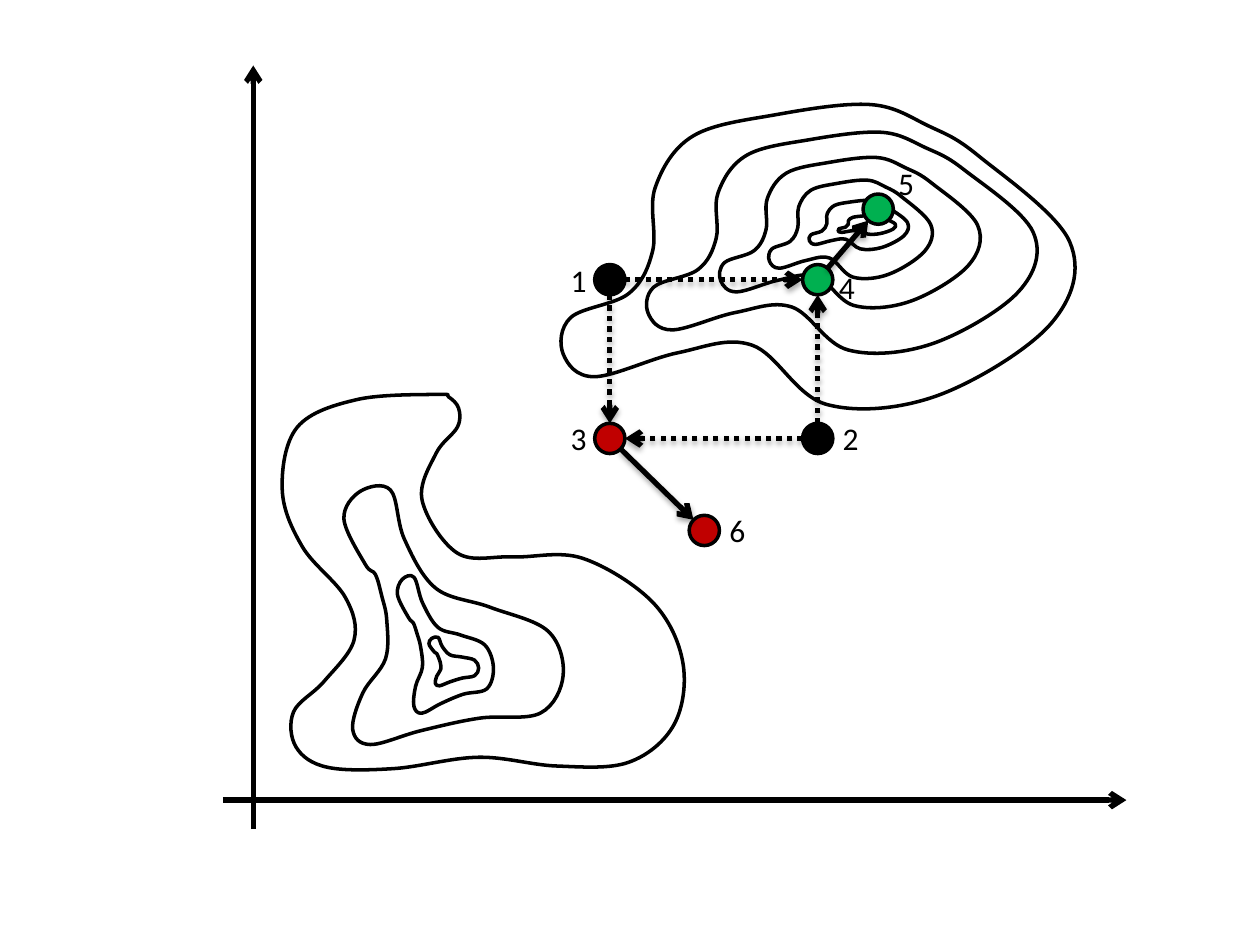
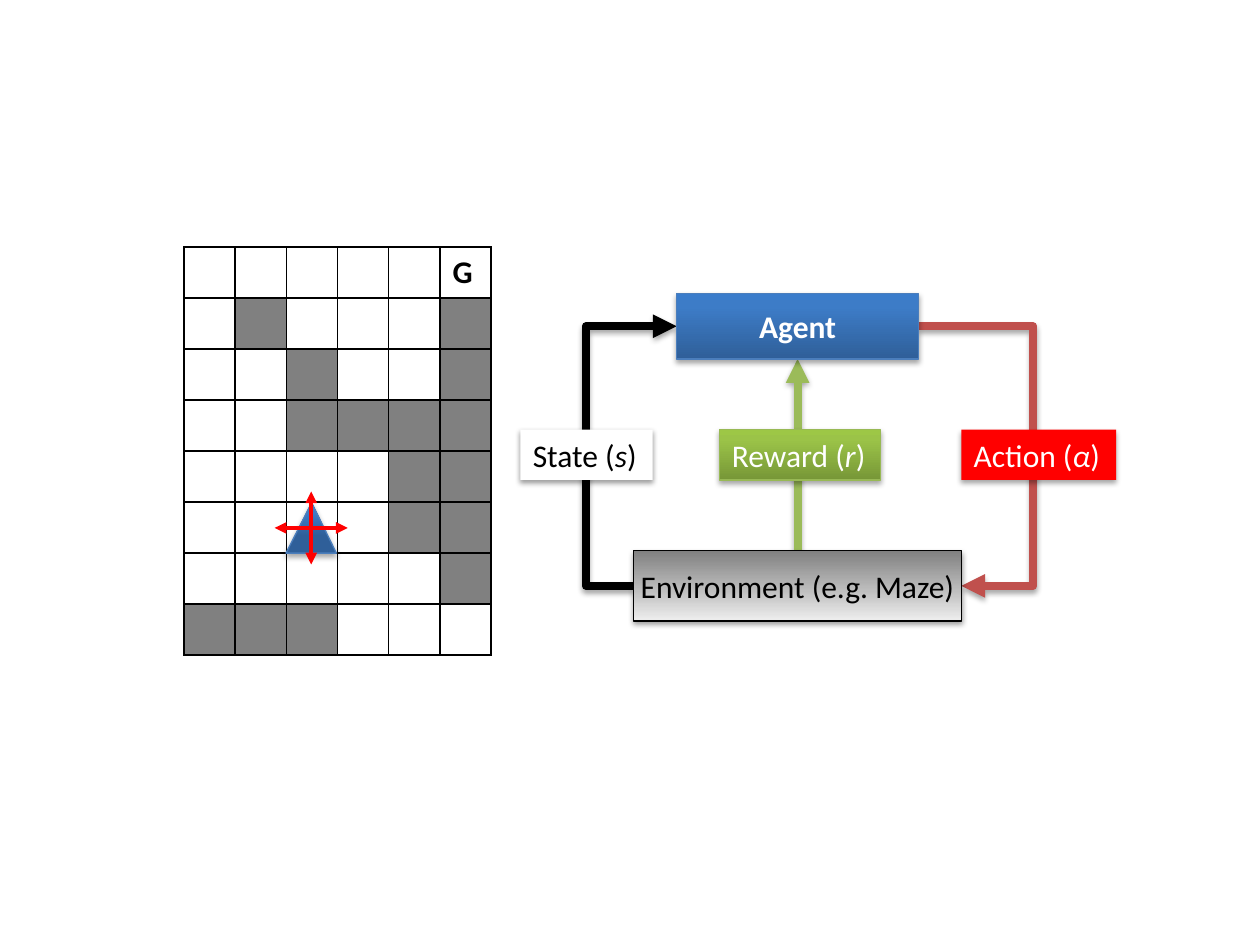
from dataclasses import dataclass
from math import hypot

from lxml import etree
from pptx import Presentation
from pptx.dml.color import RGBColor
from pptx.enum.dml import MSO_LINE
from pptx.enum.shapes import MSO_CONNECTOR, MSO_SHAPE
from pptx.enum.text import MSO_ANCHOR, MSO_AUTO_SIZE, PP_ALIGN
from pptx.oxml.ns import qn
from pptx.util import Inches, Pt

# The slide is a grid of 1000 columns by 750 rows; every length is in grid units
COLUMNS, ROWS = 1000, 750
UNIT = Inches(10) // COLUMNS

BLACK = RGBColor(0x00, 0x00, 0x00)
WHITE = RGBColor(0xFF, 0xFF, 0xFF)
GREY = RGBColor(0x80, 0x80, 0x80)
PALE_GREY = RGBColor(0xEE, 0xEE, 0xEE)
RED = RGBColor(0xFF, 0x00, 0x00)
DARK_RED = RGBColor(0xC0, 0x00, 0x00)
BRICK = RGBColor(0xC0, 0x50, 0x4D)
GREEN = RGBColor(0x00, 0xB0, 0x50)
OLIVE = RGBColor(0x9B, 0xBB, 0x59)
OLIVE_EDGE = RGBColor(0x98, 0xB9, 0x55)
BLUE_EDGE = RGBColor(0x4B, 0x7E, 0xBC)
BLUES = [RGBColor(0x2F, 0x5F, 0x99), RGBColor(0x3D, 0x7C, 0xC7), RGBColor(0x3A, 0x7C, 0xCB)]
OLIVES = [RGBColor(0x77, 0x97, 0x37), RGBColor(0x9B, 0xC3, 0x48), RGBColor(0x9D, 0xC7, 0x46)]

STRAIGHT, ELBOW = MSO_CONNECTOR.STRAIGHT, MSO_CONNECTOR.ELBOW
ELLIPSE, RECTANGLE, TRIANGLE = MSO_SHAPE.OVAL, MSO_SHAPE.RECTANGLE, MSO_SHAPE.ISOSCELES_TRIANGLE
DOTTED = MSO_LINE.ROUND_DOT
MIDDLE, TOP = MSO_ANCHOR.MIDDLE, MSO_ANCHOR.TOP
CENTER, LEFT = PP_ALIGN.CENTER, PP_ALIGN.LEFT
GROW, FIXED = MSO_AUTO_SIZE.SHAPE_TO_FIT_TEXT, MSO_AUTO_SIZE.NONE

TEXT_FORMAT = {"name": "Calibri", "size": Pt(18)}
CENTRED = {"align": CENTER, "vertical_anchor": MIDDLE, "auto_size": FIXED}
# Shadow opacity in percent and distance in EMU
NO_SHADOW, STRONG, SOFT = (0, 0), (35, 23000), (38, 20000)


@dataclass
class Box:
    left: float
    top: float
    width: float
    height: float

    def at(self, across, down):
        """Point at these shares of the width and height."""
        return self.left + across * self.width, self.top + down * self.height

    def emu(self):
        return grid(self.left, self.top, self.width, self.height)


@dataclass
class Landform:
    """Closed smooth outline through anchors, with the box it fills."""
    box: Box
    anchors: list


BASIN = Landform(Box(224, 313, 318, 298), [
    (348, 313), (284, 317), (236, 339), (224, 389), (240, 434), (274, 474), (281, 508),
    (257, 541), (233, 565), (235, 593), (260, 609), (313, 610), (380, 601), (442, 608),
    (499, 605), (535, 575), (542, 526), (518, 478), (462, 443), (407, 442), (363, 439),
    (335, 397), (346, 360), (363, 339), (364, 324), (356, 315)])
VALLEY = Landform(Box(273, 386, 174, 206), [
    (290, 448), (273, 412), (286, 390), (310, 389), (321, 428), (346, 467), (389, 482),
    (435, 501), (447, 536), (429, 566), (381, 570), (334, 580), (294, 591), (280, 579),
    (288, 550), (306, 523), (307, 492), (303, 473), (298, 456)])
HILL = Landform(Box(445, 83, 408, 241), [
    (777, 124), (849, 192), (834, 257), (744, 314), (656, 321), (597, 274), (538, 280),
    (472, 299), (447, 281), (453, 252), (499, 233), (518, 199), (520, 149), (550, 108),
    (616, 91), (691, 83), (737, 100)])

# Contour levels, outermost first: each refits its landform to a smaller box
INNER_TURN = 353.4
VALLEY_CORE = [Box(320, 454, 69, 110), Box(342, 504, 37, 39)]
HILL_LEVELS = [HILL.box, Box(513, 105, 310, 175), Box(571, 125, 207, 119),
               Box(610, 143, 130, 78), Box(642, 159, 79, 39), Box(665, 171, 46, 15)]

# Search points: centre, colour, corner of the number's box
RADIUS = 12
START_X, CROSS_X, HIGH_Y, LOW_Y = 484, 649, 222, 348
POINTS = {
    "1": ((START_X, HIGH_Y), BLACK, (443, 202)),
    "2": ((CROSS_X, LOW_Y), BLACK, (659, 328)),
    "3": ((START_X, LOW_Y), DARK_RED, (443, 328)),
    "4": ((CROSS_X, HIGH_Y), GREEN, (656, 208)),
    "5": ((697, 166), GREEN, (703, 125)),
    "6": ((559, 421), DARK_RED, (569, 401)),
}
CROSSOVERS = ["13", "14", "23", "24"]
IMPROVEMENTS = ["36", "45"]

# Maze rows: # wall, . free, G goal
MAZE = [".....G", ".#...#", "..#..#", "..####", "....##", "....##", ".....#", "###..."]
MAZE_BOX = Box(146, 196, 244, 324)
WALKER_BOX = Box(227, 399, 40, 40)
WALKER_REACH = 29

# Learning loop
AGENT_BOX = Box(537, 233, 192, 52)
ENVIRONMENT_BOX = Box(503, 437, 260, 56)
STATE_LANE, ACTION_LANE = 465, 820
SIGNAL_TOP, SIGNAL_HEIGHT = 341, 40


def grid(*lengths):
    return [round(length * UNIT) for length in lengths]


def set_all(target, values):
    for name, value in values.items():
        setattr(target, name, value)


def add_xml(parent, tag, **attributes):
    return etree.SubElement(parent, qn(tag), {k: str(v) for k, v in attributes.items()})


def set_shadow(shape, opacity, distance):
    """Write the effect list; call after fill and line are set."""
    effects = add_xml(shape._element.spPr, "a:effectLst")
    if opacity:
        shadow = add_xml(effects, "a:outerShdw", blurRad=40000, dist=distance,
                         dir=5400000, rotWithShape=0)
        color = add_xml(shadow, "a:srgbClr", val=BLACK)
        add_xml(color, "a:alpha", val=opacity * 1000)


def rising(colors, first=0):
    """Gradient from bottom to top."""
    return list(zip((first, 80, 100), colors)), 270


def set_gradient(shape, stops, angle):
    shape.fill.gradient()
    gradient = shape._element.spPr.find(qn("a:gradFill"))
    stop_list = gradient.find(qn("a:gsLst"))
    del stop_list[:]
    for position, color in stops:
        add_xml(add_xml(stop_list, "a:gs", pos=position * 1000), "a:srgbClr", val=color)
    gradient.find(qn("a:lin")).set("ang", str(angle * 60000))


def paint(shape, fill, edge=None, width=0.75, shadow=NO_SHADOW):
    """Fill is a colour, or a pair of gradient stops and angle."""
    if isinstance(fill, RGBColor):
        shape.fill.solid()
        shape.fill.fore_color.rgb = fill
    else:
        set_gradient(shape, *fill)
    if edge is None:
        shape.line.fill.background()
    else:
        shape.line.color.rgb = edge
        shape.line.width = Pt(width)
    set_shadow(shape, *shadow)


def draw_shape(slide, kind, box, fill, **look):
    shape = slide.shapes.add_shape(kind, *box.emu())
    paint(shape, fill, **look)
    return shape


def add_run(paragraph, text, color, **style):
    run = paragraph.add_run()
    run.text = text
    set_all(run.font, {**TEXT_FORMAT, **style})
    run.font.color.rgb = color


def write(frame, text, color, symbol=None, bold=False, align=LEFT, **frame_format):
    """A symbol follows the text in italics, in brackets."""
    set_all(frame, {"word_wrap": False, "vertical_anchor": TOP, "auto_size": GROW, **frame_format})
    paragraph = frame.paragraphs[0]
    paragraph.alignment = align
    parts = [(f"{text} (", False), (symbol, True), (")", False)] if symbol else [(text, False)]
    for part, italic in parts:
        add_run(paragraph, part, color, bold=bold, italic=italic)


def draw_line(slide, start, end, color, width, head=None, tail=None,
              dash=None, shadow=NO_SHADOW, lane=None):
    """A lane is the x of the upright part of an elbow line."""
    kind = STRAIGHT if lane is None else ELBOW
    connector = slide.shapes.add_connector(kind, *grid(*start, *end))
    connector.line.color.rgb = color
    set_all(connector.line, {"width": Pt(width), "dash_style": dash})
    outline = connector._element.spPr.find(qn("a:ln"))
    for tag, arrow in (("a:headEnd", head), ("a:tailEnd", tail)):
        if arrow:
            add_xml(outline, tag, type=arrow)
    if lane is not None:
        share = (lane - start[0]) / (end[0] - start[0])
        guides = connector._element.spPr.find(qn("a:prstGeom")).get_or_add_avLst()
        add_xml(guides, "a:gd", name="adj1", fmla=f"val {round(share * 100000)}")
    set_shadow(connector, *shadow)


def smooth_segments(anchors):
    """Bezier triples; the tangent at an anchor follows the chord of its neighbours."""
    count = len(anchors)
    for i in range(count):
        before, start, end, after = (anchors[(i + k) % count] for k in (-1, 0, 1, 2))
        leave = [s + (e - b) / 6 for b, s, e in zip(before, start, end)]
        arrive = [e - (a - s) / 6 for s, e, a in zip(start, end, after)]
        yield leave, arrive, end


def draw_contour(slide, landform, box, turn=0):
    base = landform.box
    builder = slide.shapes.build_freeform(0, 0, scale=UNIT)
    builder.add_line_segments([(base.width, base.height)])
    contour = builder.convert_to_shape()
    fitted = dict(zip(("left", "top", "width", "height"), box.emu()))
    set_all(contour, {**fitted, "rotation": turn})
    paint(contour, WHITE, BLACK, 2)

    # Outline in tenths of a grid unit of the base box, stretched to the fitted box
    outline = contour._element.find(".//" + qn("a:path"))
    del outline[:]
    outline.set("w", str(base.width * 10))
    outline.set("h", str(base.height * 10))

    def add_step(tag, points):
        step = add_xml(outline, tag)
        for x, y in points:
            add_xml(step, "a:pt", x=round((x - base.left) * 10), y=round((y - base.top) * 10))

    add_step("a:moveTo", landform.anchors[:1])
    for segment in smooth_segments(landform.anchors):
        add_step("a:cubicBezTo", segment)
    add_xml(outline, "a:close")


def draw_move(slide, pair, dash=None):
    """Arrow between the rims of two search points."""
    (x1, y1), (x2, y2) = (POINTS[number][0] for number in pair)
    share = RADIUS / hypot(x2 - x1, y2 - y1)
    dx, dy = (x2 - x1) * share, (y2 - y1) * share
    draw_line(slide, (x1 + dx, y1 + dy), (x2 - dx, y2 - dy), BLACK, 3,
              tail="arrow", dash=dash, shadow=STRONG)


def draw_maze(slide):
    maze = slide.shapes.add_table(len(MAZE), len(MAZE[0]), *MAZE_BOX.emu()).table
    for r, row in enumerate(MAZE):
        for c, mark in enumerate(row):
            cell = maze.cell(r, c)
            cell.fill.solid()
            cell.fill.fore_color.rgb = GREY if mark == "#" else WHITE
            properties = cell._tc.get_or_add_tcPr()
            for place, side in enumerate(("a:lnL", "a:lnR", "a:lnT", "a:lnB")):
                border = add_xml(properties, side, w=Pt(1))
                add_xml(add_xml(border, "a:solidFill"), "a:srgbClr", val=BLACK)
                properties.insert(place, border)
            if mark == "G":
                cell.vertical_anchor = MIDDLE
                add_run(cell.text_frame.paragraphs[0], mark, BLACK, bold=True)


def draw_walker(slide):
    walker = draw_shape(slide, TRIANGLE, WALKER_BOX, rising(BLUES, 35),
                        edge=BLUE_EDGE, shadow=STRONG)
    walker.adjustments[0] = 0.51
    x, y = WALKER_BOX.at(0.5, 0.5)
    for dx, dy in ((WALKER_REACH, 0), (0, WALKER_REACH)):
        draw_line(slide, (x - dx, y - dy), (x + dx, y + dy), RED, 2.25,
                  head="triangle", tail="triangle")


def draw_signal(slide, name, symbol, left, width, fill, ink, wrap=False, **look):
    box = Box(left, SIGNAL_TOP, width, SIGNAL_HEIGHT)
    signal = draw_shape(slide, RECTANGLE, box, fill, **look)
    write(signal.text_frame, name, ink, symbol, word_wrap=wrap)


def draw_learning_loop(slide):
    agent, environment = AGENT_BOX, ENVIRONMENT_BOX
    flow = {"width": 4.5, "tail": "triangle", "shadow": STRONG}
    draw_line(slide, environment.at(0.5, 0), agent.at(0.5, 1), OLIVE, **flow)
    draw_line(slide, environment.at(0, 0.5), agent.at(0, 0.5), BLACK, lane=STATE_LANE, **flow)
    draw_line(slide, agent.at(1, 0.5), environment.at(1, 0.5), BRICK, lane=ACTION_LANE, **flow)

    place = draw_shape(slide, RECTANGLE, environment, ([(0, GREY), (100, PALE_GREY)], 90),
                       edge=BLACK, shadow=SOFT)
    write(place.text_frame, "Environment (e.g. Maze)", BLACK, **CENTRED)
    learner = draw_shape(slide, RECTANGLE, agent, rising(BLUES), edge=BLUE_EDGE, shadow=STRONG)
    write(learner.text_frame, "Agent", WHITE, bold=True, **CENTRED)

    draw_signal(slide, "State", "s", 413, 105, WHITE, BLACK, shadow=SOFT)
    draw_signal(slide, "Action", "α", 763, 123, RED, WHITE, wrap=True, shadow=STRONG)
    draw_signal(slide, "Reward", "r", 571, 128, rising(OLIVES), WHITE,
                edge=OLIVE_EDGE, shadow=STRONG)


def build_search_slide(slide):
    # Landscape
    for landform in (BASIN, VALLEY):
        draw_contour(slide, landform, landform.box)
    for level in VALLEY_CORE:
        draw_contour(slide, VALLEY, level, INNER_TURN)
    for level in HILL_LEVELS:
        draw_contour(slide, HILL, level)
    # Axes
    for start, end in (((201, 658), (201, 52)), ((177, 635), (894, 635))):
        draw_line(slide, start, end, BLACK, 3, tail="arrow")
    # Search points, moves and numbers
    for (x, y), color, _ in POINTS.values():
        dot = Box(x - RADIUS, y - RADIUS, 2 * RADIUS, 2 * RADIUS)
        draw_shape(slide, ELLIPSE, dot, color, edge=BLACK, width=2)
    for pair in CROSSOVERS:
        draw_move(slide, pair, DOTTED)
    for pair in IMPROVEMENTS:
        draw_move(slide, pair)
    for number, (_, _, corner) in POINTS.items():
        write(slide.shapes.add_textbox(*grid(*corner, 33, 40)).text_frame, number, BLACK)


def build_maze_slide(slide):
    for draw in (draw_learning_loop, draw_maze, draw_walker):
        draw(slide)


def main():
    deck = Presentation()
    set_all(deck, {"slide_width": COLUMNS * UNIT, "slide_height": ROWS * UNIT})
    blank = deck.slide_layouts[6]
    for build in (build_search_slide, build_maze_slide):
        build(deck.slides.add_slide(blank))
    deck.save("out.pptx")


if __name__ == "__main__":
    main()
